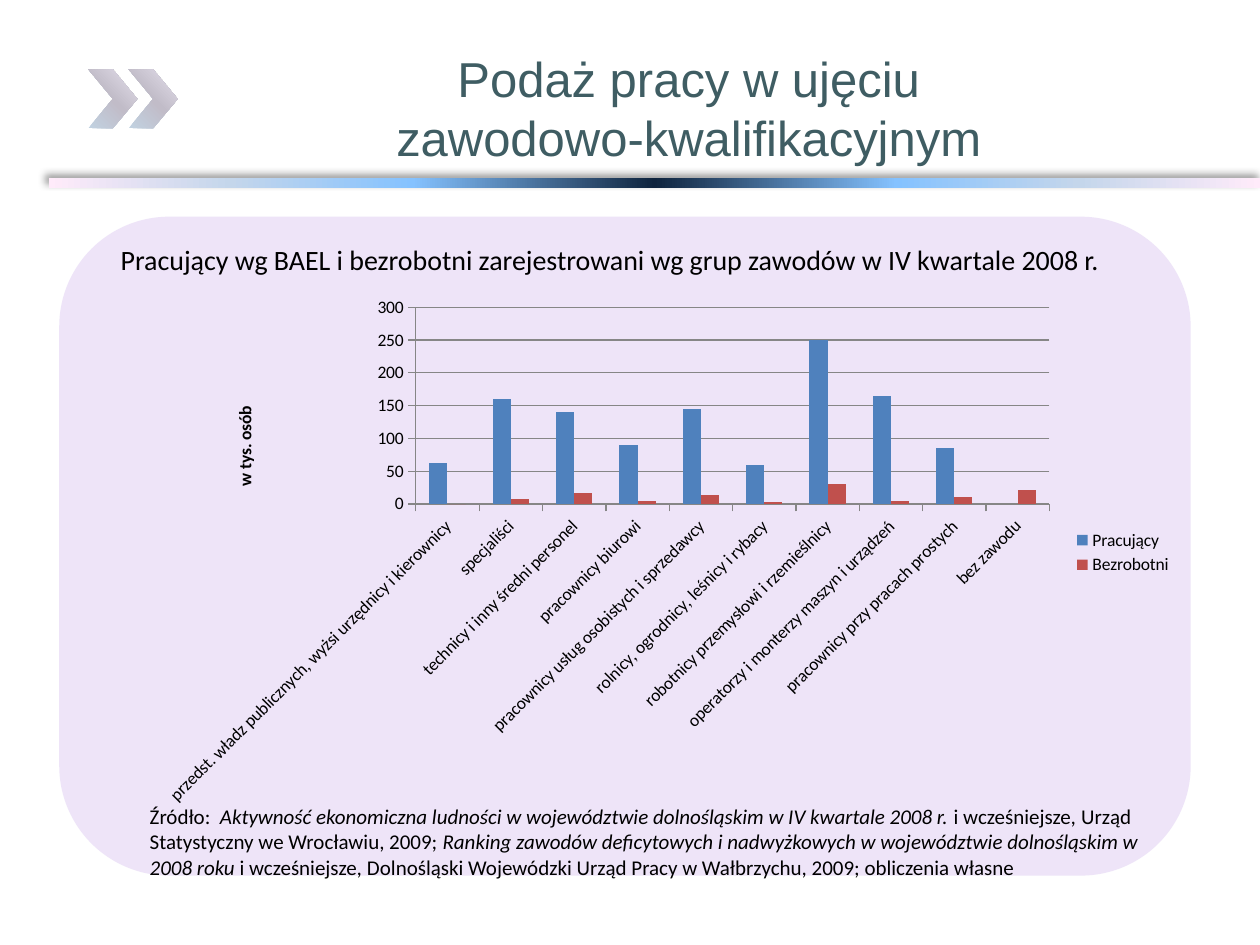
from dataclasses import dataclass
from typing import Any, NamedTuple

from lxml.etree import SubElement
from pptx import Presentation
from pptx.chart.data import CategoryChartData
from pptx.dml.color import RGBColor
from pptx.enum.chart import XL_CHART_TYPE, XL_LEGEND_POSITION, XL_TICK_MARK
from pptx.enum.shapes import MSO_SHAPE
from pptx.enum.text import MSO_ANCHOR, MSO_AUTO_SIZE, PP_ALIGN
from pptx.oxml import parse_xml
from pptx.oxml.ns import nsdecls, qn
from pptx.util import Inches, Pt

@dataclass(frozen=True)
class Theme:
    heading_font: str = "Arial"
    body_font: str = "Calibri"
    heading: str = "3F5D63"
    ink: str = "000000"
    panel: str = "E5D7F5"
    grid: str = "868686"
    employed: str = "4F81BD"
    unemployed: str = "C0504D"
    heading_size: int = 28
    caption_size: int = 16
    source_size: int = 12
    chart_size: int = 10

class Box(NamedTuple):
    left: float
    top: float
    width: float
    height: float

    def lengths(self) -> list:
        return [Inches(side) for side in self]

class Phrase(NamedTuple):
    text: str
    italic: bool = False

class Occupation(NamedTuple):
    name: str
    employed: float | None
    unemployed: float

THEME = Theme()
CHEVRON_STOPS = [(0, "C1D2E1"), (50, "C1BCC8"), (100, "E6DFED")]
HALF_STOPS = [(0, "FFEBFA"), (15, "C4D6EB"), (30, "85C2FF")]
RULE_STOPS = HALF_STOPS + [(50, "0F243E")] + [(100 - at, tint) for at, tint in reversed(HALF_STOPS)]
HEADING = ["Podaż pracy w ujęciu", "zawodowo-kwalifikacyjnym"]
CAPTION = [Phrase("Pracujący wg BAEL i bezrobotni zarejestrowani wg grup zawodów w IV kwartale 2008 r.")]
SOURCE = [
    Phrase("Źródło:"),
    Phrase("  Aktywność ekonomiczna ludności w województwie dolnośląskim w IV kwartale 2008 r.", True),
    Phrase(" i wcześniejsze"),
    Phrase(",", True),
    Phrase(" Urząd Statystyczny we Wrocławiu, 2009; "),
    Phrase("Ranking zawodów deficytowych i nadwyżkowych w województwie dolnośląskim w 2008 roku", True),
    Phrase(" i wcześniejsze"),
    Phrase(",", True),
    Phrase(" Dolnośląski Wojewódzki Urząd Pracy w Wałbrzychu, 2009; obliczenia własne"),
]
OCCUPATIONS = [
    Occupation("przedst. władz publicznych, wyżsi urzędnicy i kierownicy", 63, 0),
    Occupation("specjaliści", 160, 8),
    Occupation("technicy i inny średni personel", 140, 16),
    Occupation("pracownicy biurowi", 90, 4),
    Occupation("pracownicy usług osobistych i sprzedawcy", 145, 14),
    Occupation("rolnicy, ogrodnicy, leśnicy i rybacy", 60, 3),
    Occupation("robotnicy przemysłowi i rzemieślnicy", 250, 31),
    Occupation("operatorzy i monterzy maszyn i urządzeń", 164, 5),
    Occupation("pracownicy przy pracach prostych", 86, 11),
    Occupation("bez zawodu", None, 22),
]

def apply_format(target: Any, values: dict) -> None:
    """Set every named attribute on the target."""
    for name, value in values.items():
        setattr(target, name, value)

def style_font(font: Any, face: str, size: int, color: str, **extra: Any) -> None:
    """Give a font its face, size and colour."""
    apply_format(font, {"name": face, "size": Pt(size), **extra})
    font.color.rgb = RGBColor.from_string(color)

def add_plain_shape(slide: Any, kind: MSO_SHAPE, box: Box) -> Any:
    """Add a preset shape without line or shadow."""
    shape = slide.shapes.add_shape(kind, *box.lengths())
    shape.shadow.inherit = False
    shape.line.fill.background()
    return shape

def fill_gradient(shape: Any, stops: list, angle: float) -> None:
    """Fill a shape with a linear gradient."""
    shape.fill.gradient()
    shape.fill.gradient_angle = angle
    stop_list = shape._element.spPr.find(qn("a:gradFill")).find(qn("a:gsLst"))
    stop_list.clear()
    for at, tint in stops:
        stop = SubElement(stop_list, qn("a:gs"), pos=str(at * 1000))
        SubElement(stop, qn("a:srgbClr"), val=tint)

def add_rule(slide: Any) -> None:
    """Draw the shaded band below the heading."""
    rule = add_plain_shape(slide, MSO_SHAPE.RECTANGLE, Box(0.39, 1.41, 9.61, 0.08))
    fill_gradient(rule, RULE_STOPS, 0)
    effects = rule._element.spPr.find(qn("a:effectLst"))
    shadow = SubElement(effects, qn("a:outerShdw"), blurRad=str(Pt(4)), dist=str(Pt(3)),
                        dir="13500000", algn="br", rotWithShape="0")
    tint = SubElement(shadow, qn("a:srgbClr"), val=THEME.ink)
    SubElement(tint, qn("a:alpha"), val="40000")

def add_panel(slide: Any) -> None:
    """Draw the translucent panel behind the chart."""
    panel = add_plain_shape(slide, MSO_SHAPE.ROUNDED_RECTANGLE, Box(0.47, 1.72, 8.98, 5.23))
    panel.fill.solid()
    panel.fill.fore_color.rgb = RGBColor.from_string(THEME.panel)
    tint = panel._element.spPr.find(qn("a:solidFill")).find(qn("a:srgbClr"))
    SubElement(tint, qn("a:alpha"), val="65000")

def add_heading(slide: Any) -> None:
    """Place and format the slide title."""
    heading = slide.shapes.title
    apply_format(heading, dict(zip(Box._fields, Box(1.95, 0.23, 7.03, 1.25).lengths())))
    frame = heading.text_frame
    frame.text = "\n".join(HEADING)
    apply_format(frame, {"word_wrap": True, "vertical_anchor": MSO_ANCHOR.MIDDLE})
    for line in frame.paragraphs:
        line.alignment = PP_ALIGN.CENTER
        style_font(line.runs[0].font, THEME.heading_font, THEME.heading_size, THEME.heading)

def add_text(slide: Any, box: Box, phrases: list, size: int) -> None:
    """Add a paragraph made of upright and italic phrases."""
    frame = slide.shapes.add_textbox(*box.lengths()).text_frame
    apply_format(frame, {"word_wrap": True, "auto_size": MSO_AUTO_SIZE.SHAPE_TO_FIT_TEXT})
    for phrase in phrases:
        run = frame.paragraphs[0].add_run()
        run.text = phrase.text
        style_font(run.font, THEME.body_font, size, THEME.ink, italic=phrase.italic)

def set_layout(parent: Any, after: str | None, inner: bool = False, **places: float) -> None:
    """Fix a chart part at fractions of the chart area."""
    for old in parent.findall(qn("c:layout")):
        parent.remove(old)
    target = '<c:layoutTarget val="inner"/>' if inner else ""
    modes = "".join(f'<c:{side}Mode val="edge"/>' for side in "xy")
    values = "".join(f'<c:{side} val="{value}"/>' for side, value in places.items())
    layout = parse_xml(f'<c:layout {nsdecls("c")}><c:manualLayout>{target}{modes}{values}'
                       '</c:manualLayout></c:layout>')
    parent.insert(parent.index(parent.find(qn(after))) + 1 if after else 0, layout)

def add_occupation_chart(slide: Any, box: Box) -> None:
    """Chart employed and unemployed people by occupation."""
    figures = CategoryChartData()
    figures.categories = [job.name for job in OCCUPATIONS]
    figures.add_series("Pracujący", [job.employed for job in OCCUPATIONS])
    figures.add_series("Bezrobotni", [job.unemployed for job in OCCUPATIONS])
    chart = slide.shapes.add_chart(XL_CHART_TYPE.COLUMN_CLUSTERED, *box.lengths(), figures).chart
    style_font(chart.font, THEME.body_font, THEME.chart_size, THEME.ink)
    apply_format(chart, {"has_title": False, "has_legend": True})
    apply_format(chart.legend, {"position": XL_LEGEND_POSITION.RIGHT, "include_in_layout": False})
    plot = chart.plots[0]
    apply_format(plot, {"gap_width": 150, "overlap": 0, "vary_by_categories": False})
    for series, tint in zip(plot.series, (THEME.employed, THEME.unemployed)):
        series.format.fill.solid()
        series.format.fill.fore_color.rgb = RGBColor.from_string(tint)
    jobs, people = chart.category_axis, chart.value_axis
    apply_format(people, {"maximum_scale": 300, "major_unit": 50, "has_major_gridlines": True})
    for axis in (jobs, people):
        axis.major_tick_mark = XL_TICK_MARK.OUTSIDE
    for stroke in (jobs.format.line, people.format.line, people.major_gridlines.format.line):
        stroke.color.rgb = RGBColor.from_string(THEME.grid)
    style_font(jobs.tick_labels.font, THEME.body_font, THEME.chart_size, THEME.ink)
    jobs._element.find(qn("c:txPr")).find(qn("a:bodyPr")).set("rot", "-2700000")
    unit = people.axis_title.text_frame
    unit.text = "w tys. osób"
    unit._txBody.find(qn("a:bodyPr")).set("rot", "-5400000")
    style_font(unit.paragraphs[0].runs[0].font, THEME.body_font, THEME.chart_size, THEME.ink, bold=True)
    set_layout(chart._chartSpace.chart.plotArea, None, True, x=0.3, y=0.04, w=0.58, h=0.37)
    set_layout(chart.legend._element, "c:legendPos", x=0.9, y=0.45)
    set_layout(people.axis_title._element, "c:tx", x=0.13, y=0.22)

def main() -> None:
    """Build and save the slide."""
    deck = Presentation()
    apply_format(deck, {"slide_width": Inches(10), "slide_height": Inches(7.5)})
    slide = deck.slides.add_slide(deck.slide_layouts[5])
    add_rule(slide)
    for left in (1.02, 0.7):
        fill_gradient(add_plain_shape(slide, MSO_SHAPE.CHEVRON, Box(left, 0.55, 0.39, 0.47)), CHEVRON_STOPS, 45)
    add_panel(slide)
    add_text(slide, Box(0.86, 1.88, 8.2, 0.37), CAPTION, THEME.caption_size)
    add_text(slide, Box(1.09, 6.33, 8.2, 0.71), SOURCE, THEME.source_size)
    add_heading(slide)
    add_occupation_chart(slide, Box(0.7, 2.27, 8.67, 4.22))
    deck.save("out.pptx")

if __name__ == "__main__":
    main()
